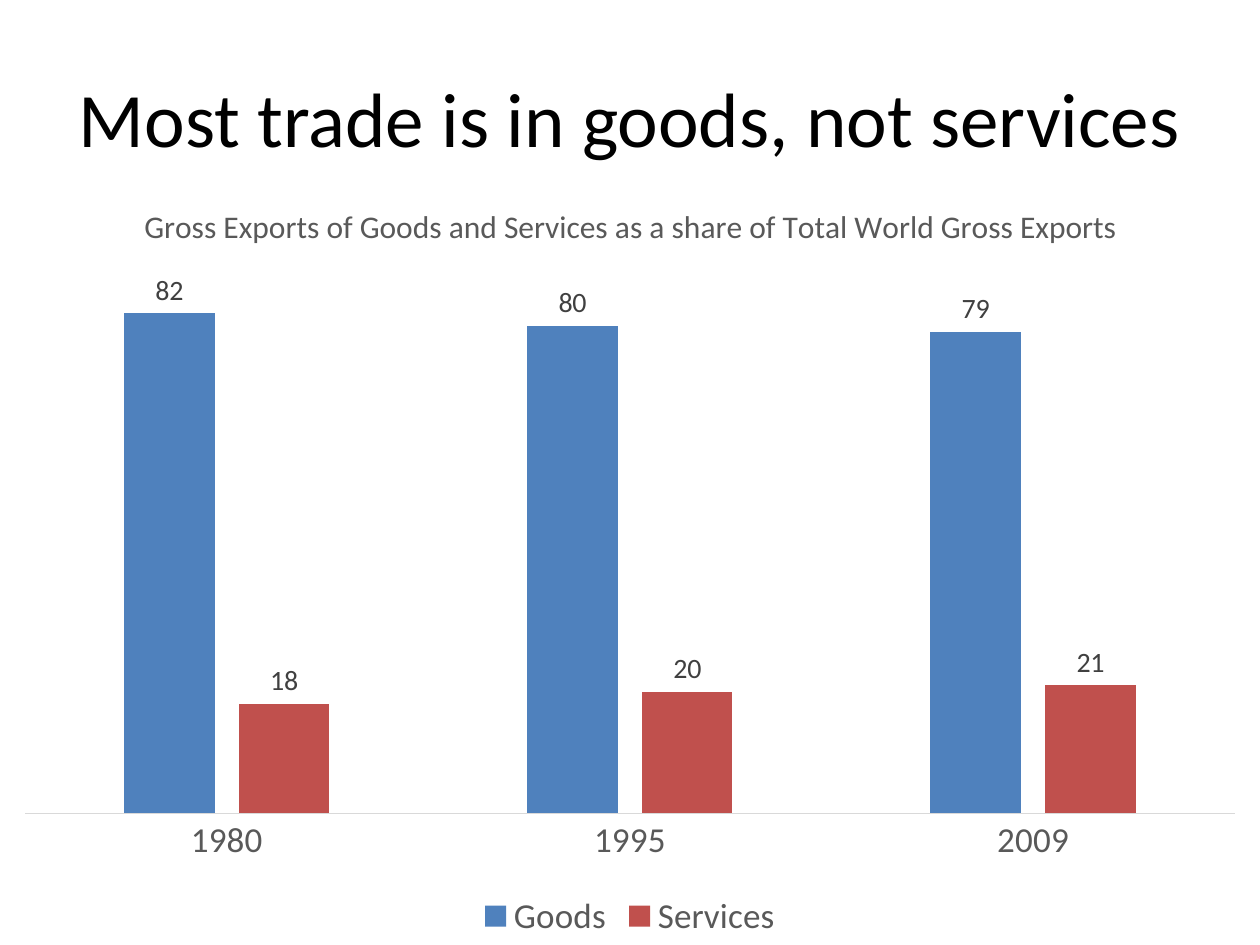
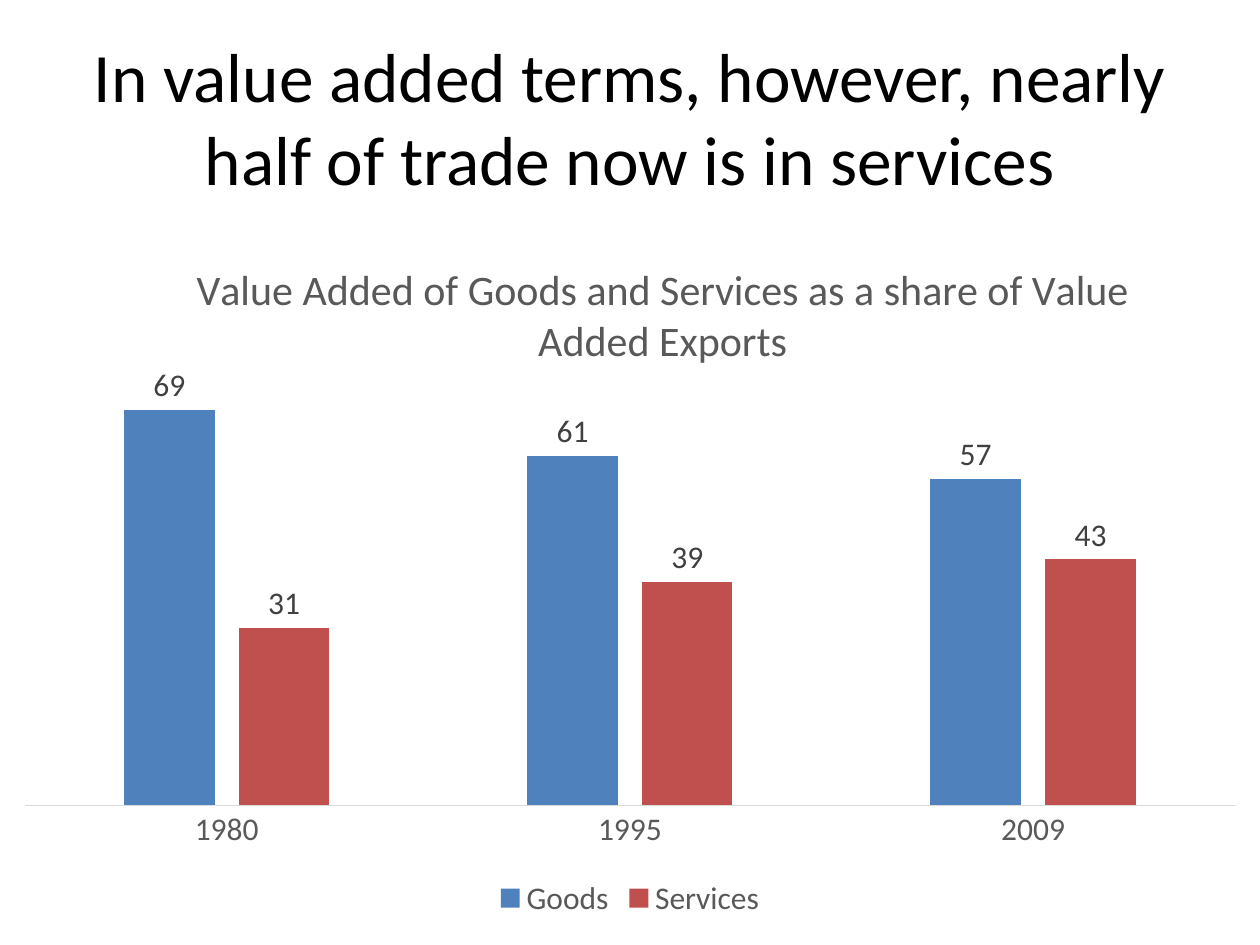
from pptx import Presentation
from pptx.chart.data import CategoryChartData
from pptx.dml.color import RGBColor
from pptx.enum.chart import XL_CHART_TYPE, XL_LABEL_POSITION, XL_LEGEND_POSITION, XL_TICK_MARK
from pptx.enum.text import MSO_ANCHOR, PP_ALIGN
from pptx.oxml import parse_xml
from pptx.oxml.ns import nsdecls, qn
from pptx.util import Inches, Pt

FONT = "Calibri"
COLORS = {"title": "000000", "text": "595959", "label": "404040",
          "axis": "D9D9D9", "Goods": "4F81BD", "Services": "C0504D"}
YEARS = ("1980", "1995", "2009")


def rgb(name):
    """Return the named colour."""
    return RGBColor.from_string(COLORS[name])


def set_font(font, size, color):
    """Set typeface, size and colour of a font."""
    font.name = FONT
    font.size = Pt(size)
    font.bold = False
    font.color.rgb = rgb(color)


def add_title(s, text, size):
    """Add the centred slide title."""
    tf = s.shapes.add_textbox(Inches(0.5), Inches(0.3), Inches(9), Inches(1.25)).text_frame
    tf.word_wrap = True
    tf.vertical_anchor = MSO_ANCHOR.MIDDLE
    p = tf.paragraphs[0]
    p.text = text
    p.alignment = PP_ALIGN.CENTER
    set_font(p.font, size, "title")


def set_layout(parent, index, inner=False, **place):
    """Place a chart part by fractions of the chart's size."""
    for old in parent.findall(qn("c:layout")):
        parent.remove(old)
    target = '<c:layoutTarget val="inner"/>' if inner else ""
    modes = "".join(f'<c:{k}Mode val="edge"/>' for k in "xy")
    values = "".join(f'<c:{k} val="{v}"/>' for k, v in place.items())
    parent.insert(index, parse_xml(
        f'<c:layout {nsdecls("c")}><c:manualLayout>{target}{modes}{values}'
        "</c:manualLayout></c:layout>"))


def add_columns(s, top, height, title, title_size, title_at, series,
                axis_max, plot_y, plot_h, label_size, text_size):
    """Add a labelled column chart of goods and services."""
    data = CategoryChartData(number_format="#,##0")
    data.categories = YEARS
    for name, values in series.items():
        data.add_series(name, values)
    chart = s.shapes.add_chart(XL_CHART_TYPE.COLUMN_CLUSTERED, Inches(0), Inches(top),
                               Inches(10), Inches(height), data).chart
    chart.font.name = FONT
    chart.font.size = Pt(10)

    p = chart.chart_title.text_frame.paragraphs[0]
    p.text = title
    set_font(p.font, title_size, "text")
    chart.chart_title.include_in_layout = False
    x, y = title_at
    set_layout(chart.element.find(".//" + qn("c:title")), 1, x=x, y=y)
    set_layout(chart.element.find(".//" + qn("c:plotArea")), 0, inner=True,
               x=0.02, y=plot_y, w=0.96, h=plot_h)

    chart.has_legend = True
    chart.legend.position = XL_LEGEND_POSITION.BOTTOM
    chart.legend.include_in_layout = False
    set_font(chart.legend.font, text_size, "text")

    axis = chart.category_axis
    axis.major_tick_mark = XL_TICK_MARK.NONE
    axis.format.line.color.rgb = rgb("axis")
    axis.format.line.width = Pt(0.75)
    set_font(axis.tick_labels.font, text_size, "text")
    axis = chart.value_axis
    axis.visible = False
    axis.has_major_gridlines = False
    axis.minimum_scale, axis.maximum_scale = 0, axis_max

    plot = chart.plots[0]
    plot.gap_width, plot.overlap = 219, -27
    plot.vary_by_categories = False
    for ser in plot.series:
        ser.format.fill.solid()
        ser.format.fill.fore_color.rgb = rgb(ser.name)
        labels = ser.data_labels
        labels.show_value = True
        labels.number_format = "#,##0"
        labels.number_format_is_linked = False
        labels.position = XL_LABEL_POSITION.OUTSIDE_END
        set_font(labels.font, label_size, "label")


def main():
    """Build and save the two slides."""
    prs = Presentation()
    prs.slide_width, prs.slide_height = Inches(10), Inches(7.5)
    blank = prs.slide_layouts[6]

    s = prs.slides.add_slide(blank)
    add_title(s, "Most trade is in goods, not services", 44)
    add_columns(s, 1.33, 6.17,
                "Gross Exports of Goods and Services as a share of Total World Gross Exports",
                18, (0.11, 0.04), {"Goods": (82, 80, 79), "Services": (18, 20, 21)},
                axis_max=90, plot_y=0.125, plot_h=0.706, label_size=16, text_size=20)

    s = prs.slides.add_slide(blank)
    add_title(s, "In value added terms, however, nearly half of trade now is in services", 39.6)
    add_columns(s, 1.55, 5.78,
                "Value Added of Goods and Services as a share of Value Added Exports",
                24, (0.15, 0.08), {"Goods": (69, 61, 57), "Services": (31, 39, 43)},
                axis_max=80, plot_y=0.208, plot_h=0.63, label_size=18, text_size=18)

    prs.save("out.pptx")


if __name__ == "__main__":
    main()
